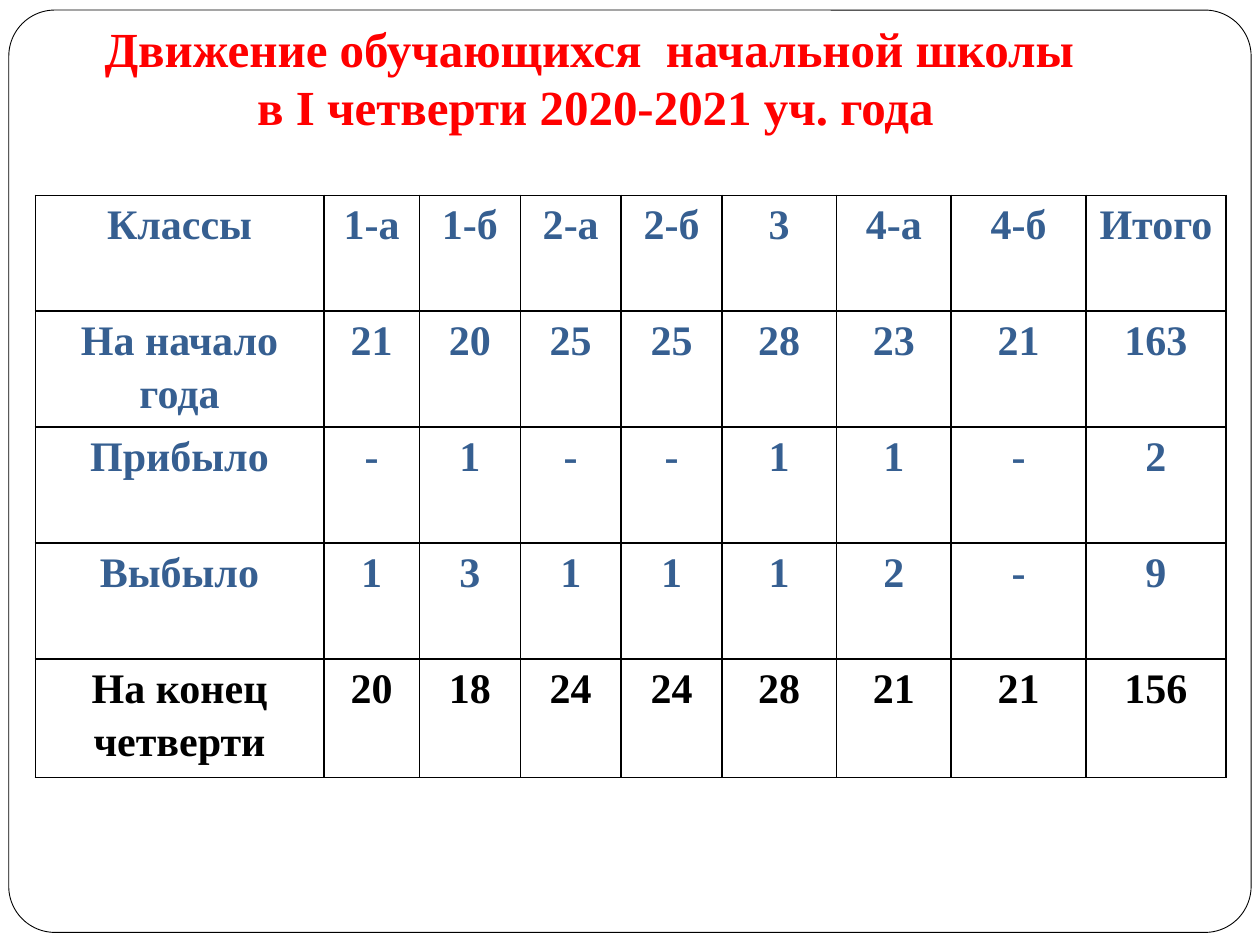
import pptx
import pptx.dml.color
import pptx.enum.shapes
import pptx.enum.text
import pptx.oxml
import pptx.oxml.ns
import pptx.util

Inches = pptx.util.Inches
Pt = pptx.util.Pt
RGBColor = pptx.dml.color.RGBColor

FONT = "Times New Roman"
RED = RGBColor(0xFF, 0x00, 0x00)
BLUE = RGBColor(0x36, 0x5F, 0x91)
BLACK = RGBColor(0x00, 0x00, 0x00)
WHITE = RGBColor(0xFF, 0xFF, 0xFF)

TITLE = [
    "Движение обучающихся  начальной школы ",
    "в I четверти 2020-2021 уч. года",
]
ROWS = [
    ("Классы", "1-а", "1-б", "2-а", "2-б", "3", "4-а", "4-б", "Итого"),
    ("На начало года", "21", "20", "25", "25", "28", "23", "21", "163"),
    ("Прибыло", "-", "1", "-", "-", "1", "1", "-", "2"),
    ("Выбыло", "1", "3", "1", "1", "1", "2", "-", "9"),
    ("На конец четверти", "20", "18", "24", "24", "28", "21", "21", "156"),
]
COLUMN_WIDTHS = [2.29, 0.76, 0.8, 0.8, 0.8, 0.91, 0.91, 1.07, 1.11]
ROW_HEIGHTS = [0.92] * 4 + [0.94]


def write(para, text, size, color):
    para.alignment = pptx.enum.text.PP_ALIGN.CENTER
    span = para.add_run()
    span.text = text
    span.font.name = FONT
    span.font.size = Pt(size)
    span.font.bold = True
    span.font.color.rgb = color


def add_borders(cell):
    """Put a thin black line on all four sides, ahead of the cell's fill."""
    properties = cell._tc.get_or_add_tcPr()
    for position, side in enumerate(("lnL", "lnR", "lnT", "lnB")):
        properties.insert(position, pptx.oxml.parse_xml(
            f'<a:{side} {pptx.oxml.ns.nsdecls("a")} w="{Pt(1)}">'
            f'<a:solidFill><a:srgbClr val="{BLACK}"/></a:solidFill></a:{side}>'))


def add_frame(page):
    frame = page.shapes.add_shape(
        pptx.enum.shapes.MSO_SHAPE.ROUNDED_RECTANGLE,
        Inches(0.07), Inches(0.08), Inches(9.86), Inches(7.32))
    frame.adjustments[0] = 0.05
    frame.shadow.inherit = False
    frame.fill.solid()
    frame.fill.fore_color.rgb = WHITE
    frame.line.color.rgb = BLACK
    frame.line.width = Pt(0.5)


def add_title(page):
    box = page.shapes.add_textbox(Inches(0.69), Inches(0.09), Inches(8.07), Inches(1.04))
    text = box.text_frame
    text.word_wrap = False
    text.auto_size = pptx.enum.text.MSO_AUTO_SIZE.SHAPE_TO_FIT_TEXT
    text.vertical_anchor = pptx.enum.text.MSO_ANCHOR.MIDDLE
    for number, line in enumerate(TITLE):
        para = text.add_paragraph() if number else text.paragraphs[0]
        write(para, line, 28, RED)


def add_movement_table(page):
    table = page.shapes.add_table(
        len(ROWS), len(COLUMN_WIDTHS), Inches(0.28), Inches(1.55),
        Inches(sum(COLUMN_WIDTHS)), Inches(sum(ROW_HEIGHTS))).table
    table.first_row = False
    table.horz_banding = False
    for column, width in zip(table.columns, COLUMN_WIDTHS):
        column.width = Inches(width)
    for row, height, values in zip(table.rows, ROW_HEIGHTS, ROWS):
        row.height = Inches(height)
        color = BLACK if values is ROWS[-1] else BLUE
        for cell, value in zip(row.cells, values):
            cell.margin_left = cell.margin_right = Inches(0.07)
            cell.margin_top = cell.margin_bottom = 0
            cell.fill.background()
            add_borders(cell)
            para = cell.text_frame.paragraphs[0]
            para.line_spacing = 1.15
            write(para, value, 24, color)


def main():
    deck = pptx.Presentation()
    deck.slide_width = Inches(10)
    deck.slide_height = Inches(7.5)
    page = deck.slides.add_slide(deck.slide_layouts[6])
    add_frame(page)
    add_title(page)
    add_movement_table(page)
    deck.save("out.pptx")


if __name__ == "__main__":
    main()
